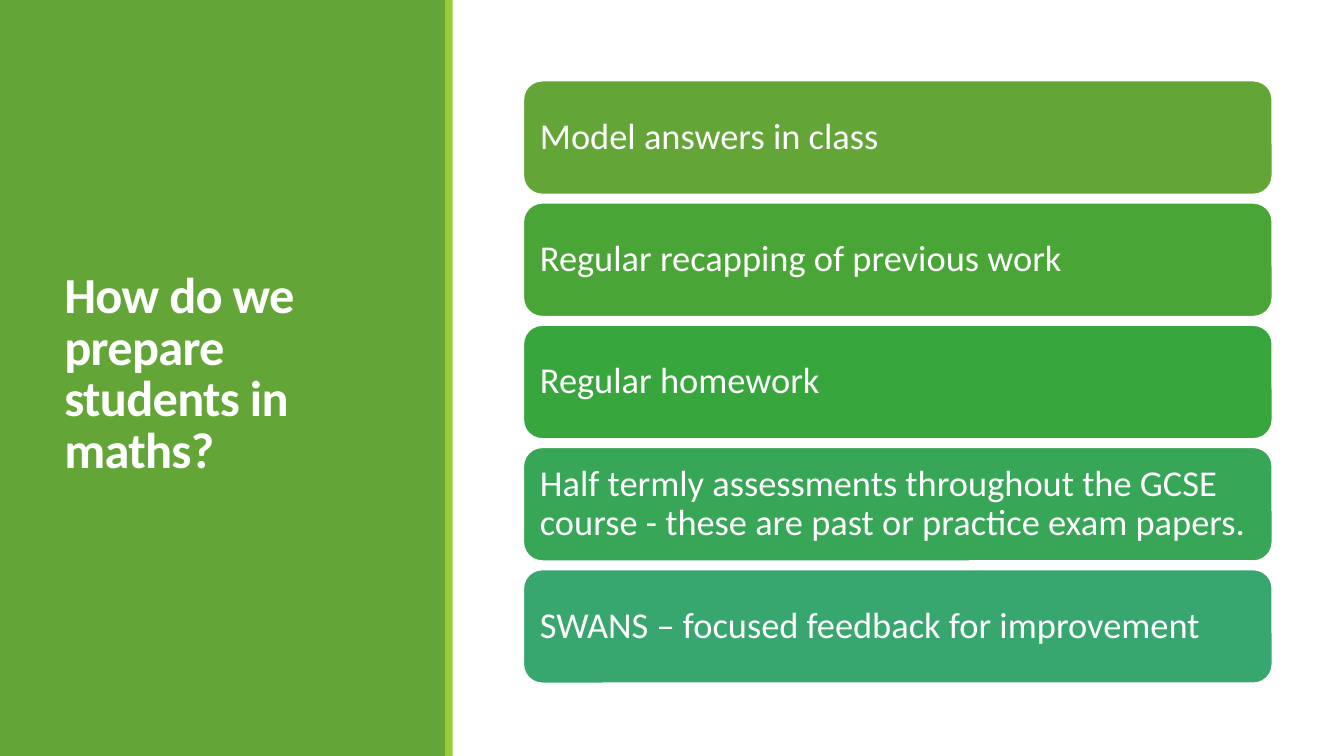
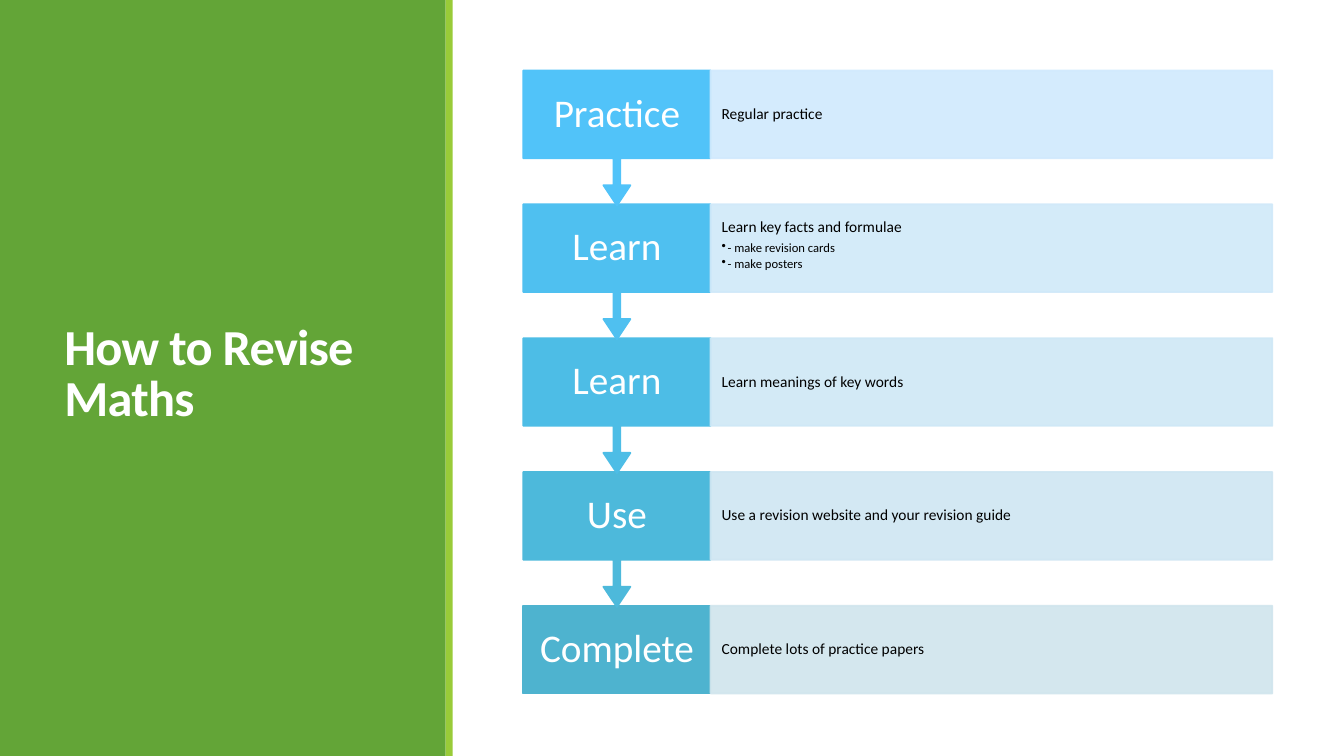
from typing import NamedTuple

from lxml.etree import SubElement
from pptx import Presentation
from pptx.dml.color import RGBColor
from pptx.enum.shapes import MSO_SHAPE
from pptx.enum.text import MSO_ANCHOR, PP_ALIGN
from pptx.oxml.ns import qn
from pptx.util import Emu, Inches, Pt

SLIDE_WIDTH, SLIDE_HEIGHT = 13.33, 7.5
FONT = "Calibri"
WHITE = RGBColor(0xFF, 0xFF, 0xFF)
BLACK = RGBColor(0x00, 0x00, 0x00)
GREEN = RGBColor(0x63, 0xA5, 0x37)
LIME = RGBColor(0x99, 0xCB, 0x38)

PANEL_WIDTH, STRIPE_WIDTH = 4.42, 0.07
CONTENT_LEFT, CONTENT_WIDTH = 5.19, 7.43
LABEL_WIDTH = CONTENT_WIDTH / 4
LABEL_SHARE = 0.65
OUTLINE = 1.25


class Stack(NamedTuple):
    """Equal rows spread evenly between a top and a bottom edge."""
    top: float
    bottom: float
    row_height: float

    def row_top(self, index: int, count: int) -> float:
        """Return the top edge of one row."""
        return self.top + index * (self.bottom - self.top - self.row_height) / (count - 1)


class Method(NamedTuple):
    """One way in which students are prepared."""
    wording: str
    color: RGBColor


class Step(NamedTuple):
    """One step of revision with its advice and tips."""
    label: str
    advice: str
    color: RGBColor
    tint: RGBColor
    tips: tuple[str, ...] = ()


METHOD_STACK = Stack(0.8, 6.78, 1.13)
STEP_STACK = Stack(0.7, 6.88, 0.87)

METHODS = [
    Method("Model answers in class", GREEN),
    Method("Regular recapping of previous work", RGBColor(0x4A, 0xA5, 0x37)),
    Method("Regular homework", RGBColor(0x37, 0xA6, 0x3D)),
    Method("Half termly assessments throughout the GCSE course - these are past "
           "or practice exam papers.", RGBColor(0x37, 0xA6, 0x56)),
    Method("SWANS – focused feedback for improvement", RGBColor(0x37, 0xA7, 0x6F)),
]

STEPS = [
    Step("Practice", "Regular practice",
         RGBColor(0x51, 0xC3, 0xF9), RGBColor(0xD0, 0xE9, 0xFD)),
    Step("Learn", "Learn key facts and formulae",
         RGBColor(0x4F, 0xC0, 0xF0), RGBColor(0xD0, 0xE9, 0xF9),
         ("- make revision cards", "- make posters")),
    Step("Learn", "Learn meanings of key words",
         RGBColor(0x4D, 0xBD, 0xE6), RGBColor(0xCF, 0xE8, 0xF6)),
    Step("Use", "Use a revision website and your revision guide",
         RGBColor(0x4D, 0xB9, 0xDB), RGBColor(0xCF, 0xE6, 0xF2)),
    Step("Complete", "Complete lots of practice papers",
         RGBColor(0x4E, 0xB3, 0xCF), RGBColor(0xD0, 0xE5, 0xED)),
]


def add_box(slide, kind, left: float, top: float, width: float, height: float,
            fill: RGBColor, outline: RGBColor | None = None):
    """Add a flat filled shape, outlined if a colour is given."""
    box = slide.shapes.add_shape(kind, Inches(left), Inches(top), Inches(width), Inches(height))
    box.shadow.inherit = False
    box.fill.solid()
    box.fill.fore_color.rgb = fill
    if outline is None:
        box.line.fill.background()
    else:
        box.line.color.rgb = outline
        box.line.width = Pt(OUTLINE)
    return box


def set_insets(frame, across: float, down: float) -> None:
    """Set wrapping, middle anchoring and the insets of a text frame."""
    frame.word_wrap = True
    frame.vertical_anchor = MSO_ANCHOR.MIDDLE
    frame.margin_left = frame.margin_right = Inches(across)
    frame.margin_top = frame.margin_bottom = Inches(down)


def style_paragraph(paragraph, size: float, color: RGBColor, spacing: float = 0.9,
                    align: PP_ALIGN = PP_ALIGN.LEFT, after: float = 0) -> None:
    """Format a paragraph and its runs."""
    paragraph.alignment = align
    paragraph.line_spacing = spacing
    paragraph.space_after = Pt(after)
    for run in paragraph.runs:
        run.font.name = FONT
        run.font.size = Pt(size)
        run.font.color.rgb = color


def add_bullet(paragraph) -> None:
    """Give a paragraph a small hanging bullet."""
    properties = paragraph._p.get_or_add_pPr()
    properties.set("marL", str(Inches(0.06)))
    properties.set("indent", str(-Inches(0.06)))
    SubElement(properties, qn("a:buChar")).set("char", "•")


def soften(box, percent: int) -> None:
    """Set the opacity of the fill and outline of a shape."""
    for color in box._element.spPr.iter(qn("a:srgbClr")):
        SubElement(color, qn("a:alpha")).set("val", str(percent * 1000))


def add_titled_slide(deck, title: str):
    """Add a blank slide with the green title panel."""
    slide = deck.slides.add_slide(deck.slide_layouts[6])
    add_box(slide, MSO_SHAPE.RECTANGLE, 0, 0, PANEL_WIDTH, SLIDE_HEIGHT, GREEN)
    add_box(slide, MSO_SHAPE.RECTANGLE, PANEL_WIDTH, 0, STRIPE_WIDTH, SLIDE_HEIGHT, LIME)
    heading = slide.shapes.add_textbox(Inches(0.54), Inches(0.57), Inches(3.37), Inches(6.31))
    frame = heading.text_frame
    frame.text = title
    set_insets(frame, 0.1, 0.05)
    paragraph = frame.paragraphs[0]
    style_paragraph(paragraph, 36, WHITE, spacing=0.85)
    font = paragraph.runs[0].font
    font.bold = True
    font._element.set("spc", "-50")
    return slide


def add_method(slide, method: Method, top: float) -> None:
    """Draw one rounded bar with its wording."""
    bar = add_box(slide, MSO_SHAPE.ROUNDED_RECTANGLE, CONTENT_LEFT, top, CONTENT_WIDTH,
                  METHOD_STACK.row_height, method.color, WHITE)
    bar.text_frame.text = method.wording
    set_insets(bar.text_frame, 0.11, 0.11)
    style_paragraph(bar.text_frame.paragraphs[0], 26, WHITE)


def add_label(slide, step: Step, top: float, is_last: bool) -> None:
    """Draw the label of a step, with an arrow unless it is the last."""
    height = STEP_STACK.row_height
    if is_last:
        label = add_box(slide, MSO_SHAPE.RECTANGLE, CONTENT_LEFT, top, LABEL_WIDTH, height,
                        step.color, step.color)
    else:
        label = add_box(slide, MSO_SHAPE.DOWN_ARROW_CALLOUT, CONTENT_LEFT, top, LABEL_WIDTH,
                        height / LABEL_SHARE, step.color, step.color)
        for index, share in enumerate((0.05, 0.1, 0.15, LABEL_SHARE)):
            label.adjustments[index] = share
    label.text_frame.text = step.label
    set_insets(label.text_frame, 0.13, 0.22)
    style_paragraph(label.text_frame.paragraphs[0], 28, WHITE, align=PP_ALIGN.CENTER)


def add_advice(slide, step: Step, top: float) -> None:
    """Draw the pale field with the advice and tips of a step."""
    field = add_box(slide, MSO_SHAPE.RECTANGLE, CONTENT_LEFT + LABEL_WIDTH, top,
                    CONTENT_WIDTH - LABEL_WIDTH, STEP_STACK.row_height, step.tint, step.tint)
    soften(field, 90)
    frame = field.text_frame
    frame.text = step.advice
    set_insets(frame, 0.11, 0.15)
    style_paragraph(frame.paragraphs[0], 11, BLACK, after=4 if step.tips else 0)
    if step.tips:
        frame.vertical_anchor = MSO_ANCHOR.TOP
    for tip in step.tips:
        paragraph = frame.add_paragraph()
        paragraph.text = tip
        paragraph.level = 1
        style_paragraph(paragraph, 9, BLACK, after=1.4)
        add_bullet(paragraph)


def main() -> None:
    """Build both slides and save the deck."""
    deck = Presentation()
    deck.slide_width = Emu(Inches(SLIDE_WIDTH))
    deck.slide_height = Emu(Inches(SLIDE_HEIGHT))

    preparation = add_titled_slide(deck, "How do we prepare students in maths?")
    for index, method in enumerate(METHODS):
        add_method(preparation, method, METHOD_STACK.row_top(index, len(METHODS)))

    revision = add_titled_slide(deck, "How to Revise Maths")
    for index, step in reversed(list(enumerate(STEPS))):
        top = STEP_STACK.row_top(index, len(STEPS))
        add_label(revision, step, top, is_last=index == len(STEPS) - 1)
        add_advice(revision, step, top)

    deck.save("out.pptx")


if __name__ == "__main__":
    main()
